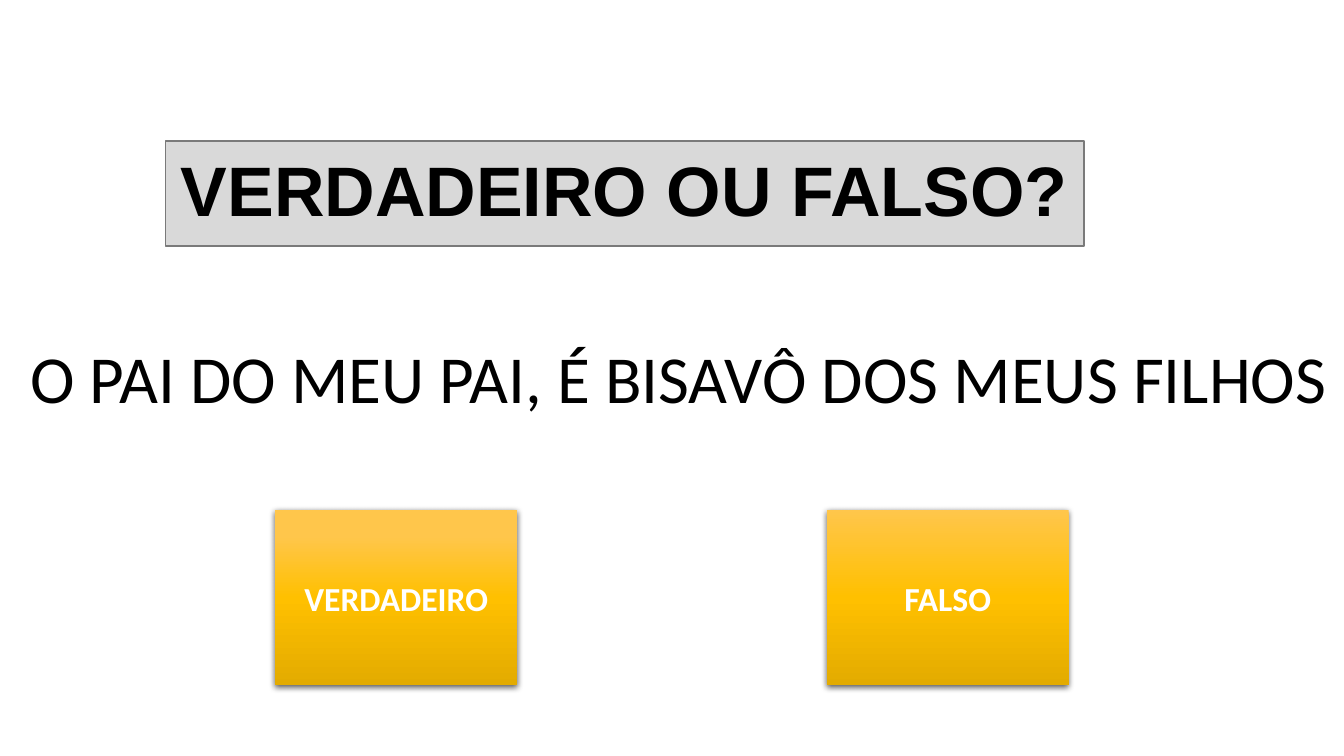
"""Build a true-or-false quiz slide with a question and two answer buttons."""
from pptx import Presentation
from pptx.dml.color import RGBColor
from pptx.enum.shapes import MSO_SHAPE
from pptx.enum.text import MSO_ANCHOR, MSO_AUTO_SIZE, PP_ALIGN
from pptx.oxml import parse_xml
from pptx.oxml.ns import nsdecls, qn
from pptx.util import Inches, Pt


def color(hex_string):
    return RGBColor.from_string(hex_string)


def write(shape, text, size, font_name, hex_string, bold=False):
    frame = shape.text_frame
    frame.word_wrap = True
    paragraph = frame.paragraphs[0]
    run = paragraph.add_run()
    run.text = text
    run.font.size = Pt(size)
    run.font.name = font_name
    run.font.bold = bold
    run.font.color.rgb = color(hex_string)
    return paragraph


presentation = Presentation()
presentation.slide_width = Inches(13.33)
presentation.slide_height = Inches(7.5)
slide = presentation.slides.add_slide(presentation.slide_layouts[6])

heading = slide.shapes.add_shape(
    MSO_SHAPE.RECTANGLE, Inches(1.64), Inches(1.4), Inches(9.11), Inches(1.04))
heading.shadow.inherit = False
heading.fill.solid()
heading.fill.fore_color.rgb = color("D9D9D9")
heading.line.color.rgb = color("7A7A7A")
heading.line.width = Pt(1)
heading.text_frame.vertical_anchor = MSO_ANCHOR.MIDDLE
heading_line = write(heading, "VERDADEIRO OU FALSO?", 50, "Arial", "000000", True)
heading_line.alignment = PP_ALIGN.CENTER
heading_line.line_spacing = 0.9

for answer, left, first_stop in [("VERDADEIRO", 2.73, 15), ("FALSO", 8.2, 0)]:
    button = slide.shapes.add_shape(
        MSO_SHAPE.RECTANGLE, Inches(left), Inches(5.06), Inches(2.4), Inches(1.74))
    button.line.fill.background()
    button.fill.gradient()
    button.fill.gradient_angle = 270
    properties = button.element.spPr
    stops = properties.find(".//" + qn("a:gsLst"))
    for stop in list(stops):
        stops.remove(stop)
    for position, shade in [(first_stop, "FFC64B"), (50, "FFC000"), (100, "E3AB00")]:
        stops.append(parse_xml(
            f'<a:gs {nsdecls("a")} pos="{position * 1000}"><a:srgbClr val="{shade}"/></a:gs>'))

    button.shadow.inherit = False
    properties.find(qn("a:effectLst")).append(parse_xml(
        f'<a:outerShdw {nsdecls("a")} blurRad="{Pt(4.5)}" dist="{Pt(1.5)}" dir="5400000" '
        'algn="ctr" rotWithShape="0"><a:srgbClr val="000000"><a:alpha val="63000"/>'
        '</a:srgbClr></a:outerShdw>'))
    button.text_frame.vertical_anchor = MSO_ANCHOR.MIDDLE
    write(button, answer, 24, "Calibri", "FFFFFF", True).alignment = PP_ALIGN.CENTER

statement = slide.shapes.add_textbox(
    Inches(0.2), Inches(3.29), Inches(13.14), Inches(0.91))
statement.text_frame.auto_size = MSO_AUTO_SIZE.SHAPE_TO_FIT_TEXT
write(statement, "O PAI DO MEU PAI, É BISAVÔ DOS MEUS FILHOS", 48, "Calibri", "000000")

presentation.save("out.pptx")
